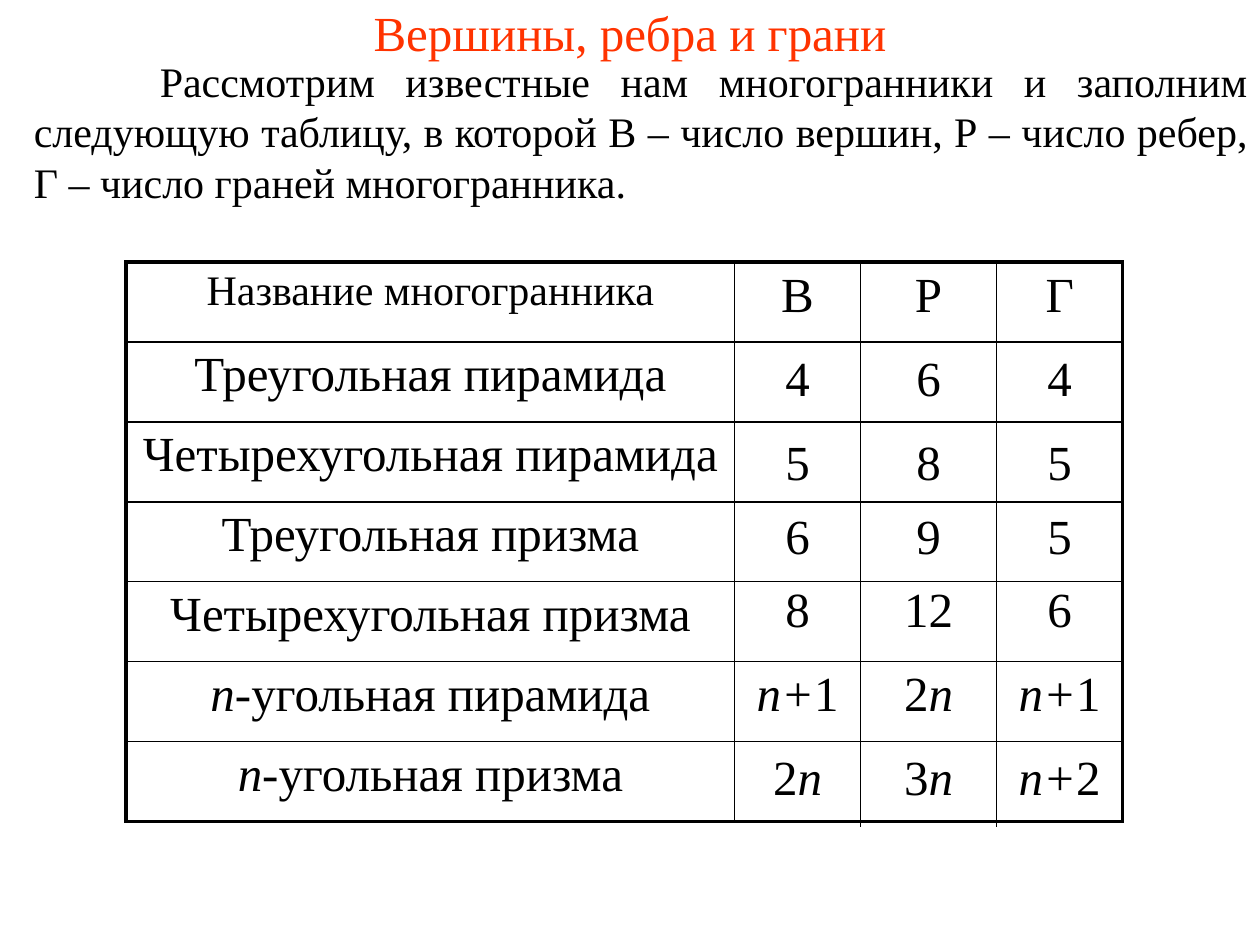
import lxml.etree
import pptx
import pptx.dml.color
import pptx.enum.text
import pptx.oxml.ns
import pptx.util

Inches = pptx.util.Inches
Align = pptx.enum.text.PP_ALIGN
BLACK = pptx.dml.color.RGBColor(0, 0, 0)
ORANGE_RED = pptx.dml.color.RGBColor(0xFF, 0x33, 0x00)
THIN, THICK = 1, 2.25


def write(frame, text, size, color=BLACK, align=Align.CENTER):
    para = frame.paragraphs[0]
    para.alignment = align
    para.font.size = pptx.util.Pt(size)
    para.font.name = "Times New Roman"
    para.font.color.rgb = color
    for index, piece in enumerate(text.split("*")):
        if piece:
            span = para.add_run()
            span.text = piece
            if index % 2:
                span.font.italic = True
    return para


def set_borders(cell, widths):
    properties = cell._tc.get_or_add_tcPr()
    for side, width in zip("LRTB", widths):
        line = lxml.etree.SubElement(properties, pptx.oxml.ns.qn(f"a:ln{side}"))
        if width:
            line.set("w", str(pptx.util.Pt(width)))
            fill = lxml.etree.SubElement(line, pptx.oxml.ns.qn("a:solidFill"))
            color = lxml.etree.SubElement(fill, pptx.oxml.ns.qn("a:srgbClr"))
            color.set("val", str(BLACK))
        else:
            lxml.etree.SubElement(line, pptx.oxml.ns.qn("a:noFill"))
    cell.fill.background()


deck = pptx.Presentation()
deck.slide_width, deck.slide_height = Inches(10), Inches(7.5)
page = deck.slides.add_slide(deck.slide_layouts[6])

title_box = page.shapes.add_textbox(Inches(0.75), 0, Inches(8.5), Inches(0.5))
title_box.text_frame.word_wrap = True
title_box.text_frame.vertical_anchor = pptx.enum.text.MSO_ANCHOR.MIDDLE
write(title_box.text_frame, "Вершины, ребра и грани", 28, ORANGE_RED)

intro_box = page.shapes.add_textbox(Inches(0.17), Inches(0.39), Inches(9.83), Inches(1.31))
intro_box.text_frame.word_wrap = True
intro = write(
    intro_box.text_frame,
    "Рассмотрим известные нам многогранники и заполним следующую таблицу, "
    "в которой В *– *число вершин, Р* – *число ребер, "
    "Г – число граней многогранника.",
    24,
    align=Align.JUSTIFY,
)
intro._p.get_or_add_pPr().set("indent", str(Inches(1)))

solids = [
    ["Название многогранника", "В", "Р", "Г"],
    ["Треугольная пирамида"],
    ["Четырехугольная пирамида"],
    ["Треугольная призма"],
    ["Четырехугольная призма"],
    ["*n-*угольная пирамида"],
    ["*n-*угольная призма"],
]
counts = [
    (2.75, ["4", "6", "4"]),
    (3.42, ["5", "8", "5"]),
    (4, ["6", "9", "5"]),
    (4.58, ["8", "12", "6"]),
    (5.25, ["*n+*1", "2*n*", "*n+*1"]),
    (5.92, ["2*n*", "3*n*", "*n+*2"]),
]
count_widths = [1, 1.08, 1]
tables = [(1, 2.08, 4.44, [4.83] + count_widths, solids)]
tables += [(5.83, top, 0.64, count_widths, [values]) for top, values in counts]

for left, top, height, widths, rows in tables:
    is_main = rows is solids
    outer = THICK if is_main else 0
    last_row, last_column = len(rows) - 1, len(widths) - 1
    table = page.shapes.add_table(
        len(rows), len(widths), Inches(left), Inches(top), Inches(sum(widths)), Inches(height)
    ).table
    table.first_row = table.horz_banding = False
    for column, width in zip(table.columns, widths):
        column.width = Inches(width)
    for row_index, texts in enumerate(rows):
        for column_index in range(len(widths)):
            cell = table.cell(row_index, column_index)
            set_borders(cell, [
                outer if column_index == 0 else THIN,
                outer if column_index == last_column else THIN,
                outer if row_index == 0 else THIN,
                outer if row_index == last_row else THIN,
            ])
            if column_index < len(texts):
                is_heading = is_main and row_index == column_index == 0
                write(cell.text_frame, texts[column_index], 24 if is_heading else 28)

deck.save("out.pptx")
